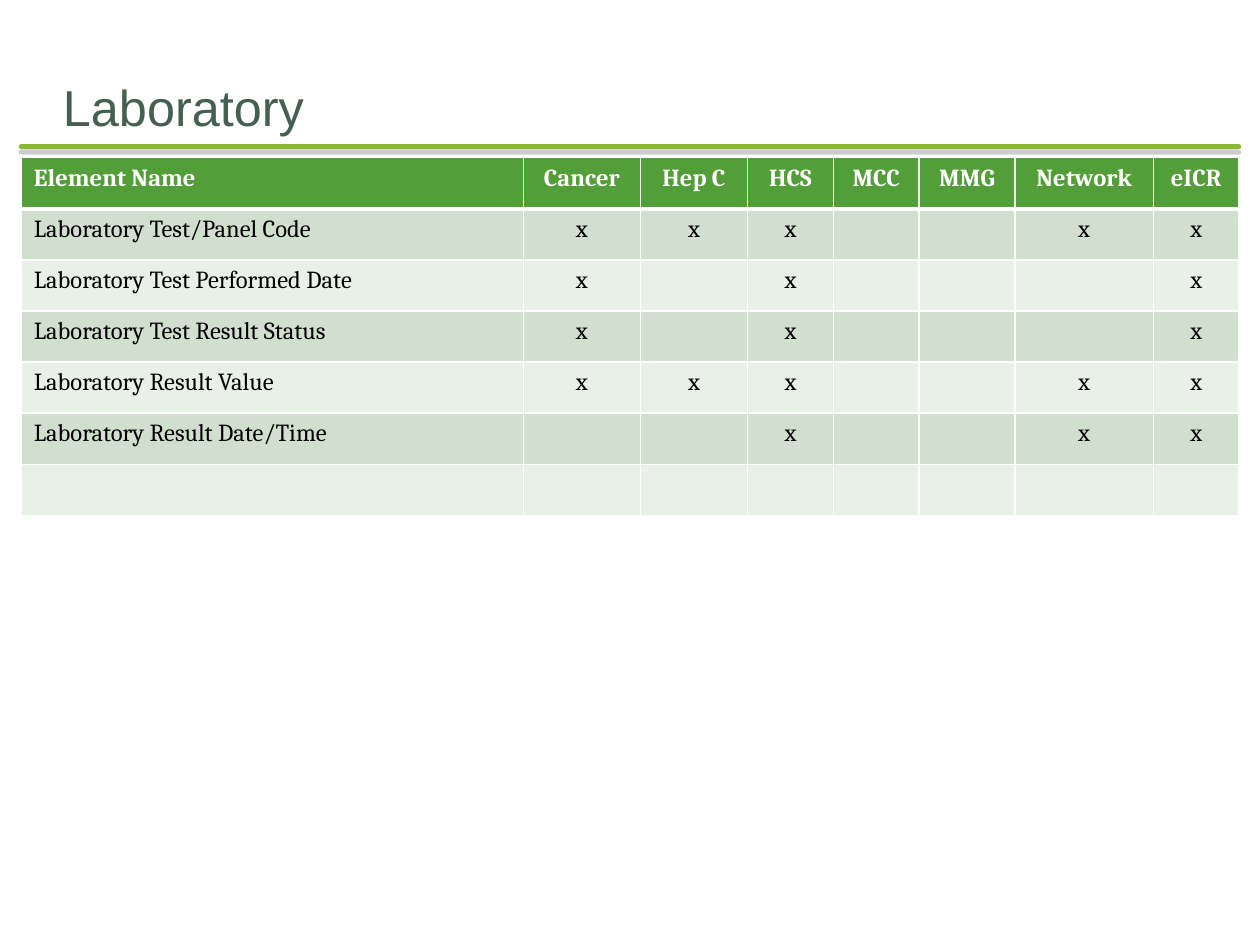
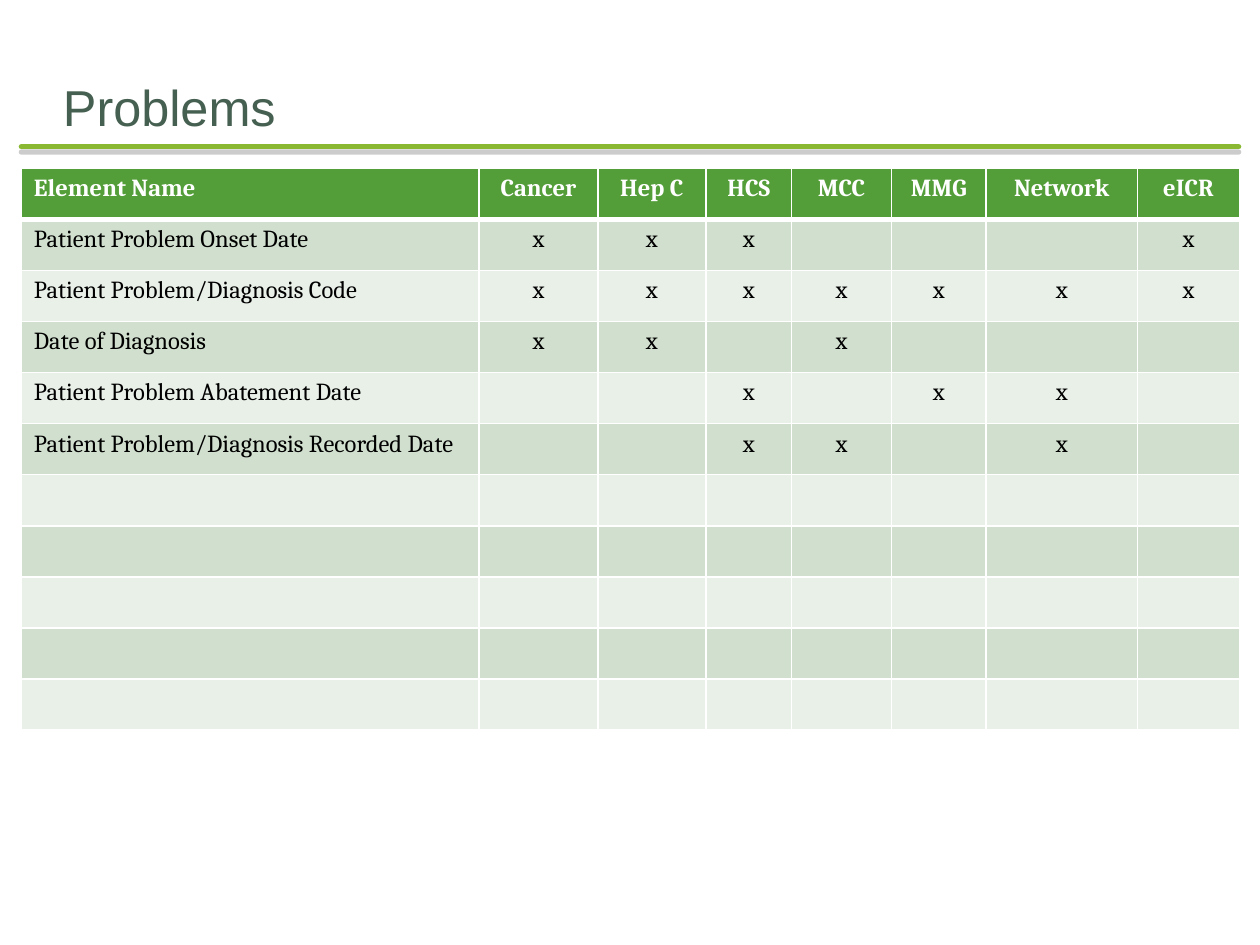
from dataclasses import dataclass

from lxml import etree
from pptx import Presentation
from pptx.dml.color import RGBColor
from pptx.enum.shapes import MSO_CONNECTOR
from pptx.enum.text import MSO_ANCHOR, PP_ALIGN
from pptx.oxml.ns import qn
from pptx.slide import Slide
from pptx.table import _Cell
from pptx.util import Cm, Pt

STRAIGHT = MSO_CONNECTOR.STRAIGHT
BOTTOM = MSO_ANCHOR.BOTTOM
LEFT, CENTER = PP_ALIGN.LEFT, PP_ALIGN.CENTER

WHITE = RGBColor(0xFF, 0xFF, 0xFF)
BLACK = RGBColor(0x00, 0x00, 0x00)
TITLE_GREEN = RGBColor(0x45, 0x5F, 0x51)
RULE_GREEN = RGBColor(0x8A, 0xB8, 0x33)
SHADOW_GRAY = RGBColor(0x80, 0x80, 0x80)
HEADER_GREEN = RGBColor(0x54, 0x9E, 0x39)
BAND_COLORS = (RGBColor(0xD1, 0xDF, 0xCE), RGBColor(0xE9, 0xF0, 0xE8))

TITLE_FONT = "Arial"
TABLE_FONT = "Cambria"
MARGIN = 0.43
RULE_TOP = 2.96
RULE_RIGHT = 24.97
ROW_HEIGHT = 1.03
SOURCES = ("Cancer", "Hep C", "HCS", "MCC", "MMG", "Network", "eICR")


@dataclass(frozen=True)
class Element:
    name: str
    sources: tuple[str, ...]


@dataclass(frozen=True)
class ElementSlide:
    title: str
    table_top: float
    column_widths: tuple[float, ...]
    elements: tuple[Element, ...]
    empty_rows: int

    def rows(self) -> list[tuple[str, ...]]:
        header = ("Element Name", *SOURCES)
        body = [
            (element.name, *("x" if source in element.sources else "" for source in SOURCES))
            for element in self.elements
        ]
        blank = ("",) * len(header)
        return [header, *body, *[blank] * self.empty_rows]


ELEMENT_SLIDES = (
    ElementSlide(
        "Laboratory",
        3.18,
        (10.12, 2.36, 2.16, 1.73, 1.73, 1.93, 2.79, 1.73),
        (
            Element("Laboratory Test/Panel Code", ("Cancer", "Hep C", "HCS", "Network", "eICR")),
            Element("Laboratory Test Performed Date", ("Cancer", "HCS", "eICR")),
            Element("Laboratory Test Result Status", ("Cancer", "HCS", "eICR")),
            Element("Laboratory Result Value", ("Cancer", "Hep C", "HCS", "Network", "eICR")),
            Element("Laboratory Result Date/Time", ("HCS", "Network", "eICR")),
        ),
        1,
    ),
    ElementSlide(
        "Problems",
        3.39,
        (9.23, 2.39, 2.18, 1.73, 2.01, 1.91, 3.05, 2.06),
        (
            Element("Patient Problem Onset Date", ("Cancer", "Hep C", "HCS", "eICR")),
            Element("Patient Problem/Diagnosis Code", SOURCES),
            Element("Date of Diagnosis", ("Cancer", "Hep C", "MCC")),
            Element("Patient Problem Abatement Date", ("HCS", "MMG", "Network")),
            Element("Patient Problem/Diagnosis Recorded Date", ("HCS", "MCC", "Network")),
        ),
        5,
    ),
)


def add_rule(slide: Slide) -> None:
    rule = slide.shapes.add_connector(
        STRAIGHT, Cm(MARGIN), Cm(RULE_TOP), Cm(RULE_RIGHT), Cm(RULE_TOP)
    )
    rule.line.color.rgb = RULE_GREEN
    rule.line.width = Pt(3)
    rule.line._get_or_add_ln().set("cap", "rnd")
    effects = etree.SubElement(rule._element.spPr, qn("a:effectLst"))
    shadow = etree.SubElement(
        effects, qn("a:outerShdw"), blurRad="0", dist=str(Pt(3)), dir="5400000"
    )
    color = etree.SubElement(shadow, qn("a:srgbClr"), val=str(SHADOW_GRAY))
    etree.SubElement(color, qn("a:alpha"), val="40000")


def add_title(slide: Slide, title: str) -> None:
    shape = slide.shapes.add_textbox(Cm(1.27), Cm(1.27), Cm(22.86), Cm(1.49))
    frame = shape.text_frame
    frame.word_wrap = True
    frame.vertical_anchor = BOTTOM
    frame.margin_left = frame.margin_right = frame.margin_bottom = 0
    frame.margin_top = Cm(0.13)
    run = frame.paragraphs[0].add_run()
    run.text = title
    run.font.name = TITLE_FONT
    run.font.size = Pt(28.8)
    run.font.color.rgb = TITLE_GREEN


def set_borders(cell: _Cell, top: float, bottom: float) -> None:
    properties = cell._tc.get_or_add_tcPr()
    widths = {"a:lnL": 1, "a:lnR": 1, "a:lnT": top, "a:lnB": bottom}
    for position, (tag, width) in enumerate(widths.items()):
        border = etree.Element(qn(tag), w=str(Pt(width)))
        fill = etree.SubElement(border, qn("a:solidFill"))
        etree.SubElement(fill, qn("a:srgbClr"), val=str(WHITE))
        properties.insert(position, border)


def fill_cell(cell: _Cell, text: str, row: int, column: int) -> None:
    is_header = row == 0
    cell.fill.solid()
    cell.fill.fore_color.rgb = HEADER_GREEN if is_header else BAND_COLORS[(row - 1) % 2]
    set_borders(cell, top=3 if row == 1 else 1, bottom=3 if is_header else 1)
    if not text:
        return
    paragraph = cell.text_frame.paragraphs[0]
    paragraph.alignment = LEFT if column == 0 else CENTER
    run = paragraph.add_run()
    run.text = text
    run.font.name = TABLE_FONT
    run.font.size = Pt(14)
    run.font.bold = is_header
    run.font.color.rgb = WHITE if is_header else BLACK


def add_element_table(slide: Slide, content: ElementSlide) -> None:
    rows = content.rows()
    widths = content.column_widths
    table = slide.shapes.add_table(
        len(rows),
        len(widths),
        Cm(MARGIN),
        Cm(content.table_top),
        Cm(sum(widths)),
        Cm(ROW_HEIGHT * len(rows)),
    ).table
    for column, width in zip(table.columns, widths):
        column.width = Cm(width)
    for row_index, texts in enumerate(rows):
        table.rows[row_index].height = Cm(ROW_HEIGHT)
        for column_index, text in enumerate(texts):
            fill_cell(table.cell(row_index, column_index), text, row_index, column_index)


def main() -> None:
    presentation = Presentation()
    presentation.slide_width = Cm(25.4)
    presentation.slide_height = Cm(19.05)
    blank_layout = presentation.slide_layouts[6]
    for content in ELEMENT_SLIDES:
        slide = presentation.slides.add_slide(blank_layout)
        add_rule(slide)
        add_title(slide, content.title)
        add_element_table(slide, content)
    presentation.save("out.pptx")


if __name__ == "__main__":
    main()
